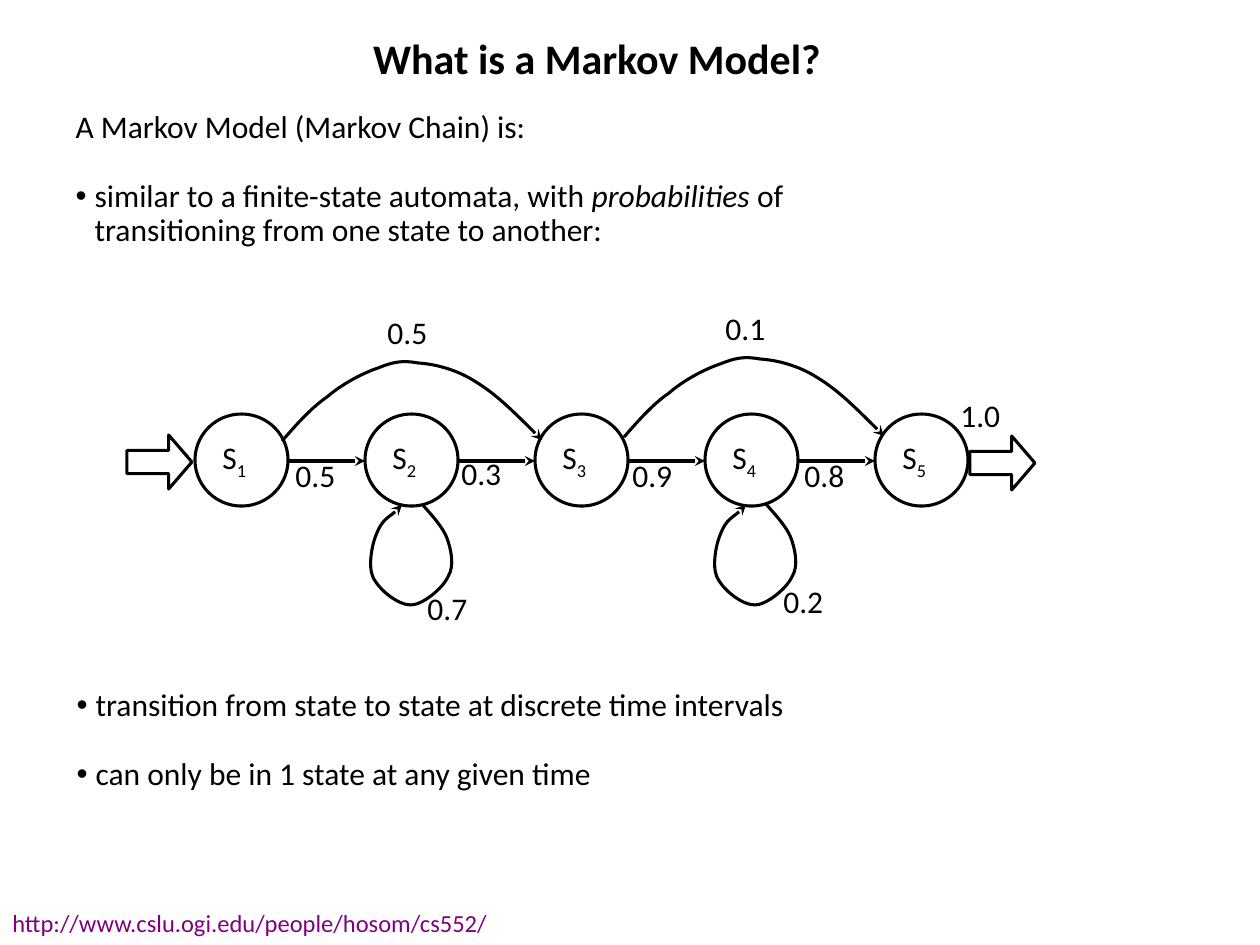
from lxml import etree
from pptx import Presentation
from pptx.dml.color import RGBColor
from pptx.enum.shapes import MSO_CONNECTOR, MSO_SHAPE
from pptx.enum.text import MSO_ANCHOR, MSO_AUTO_SIZE, PP_ALIGN
from pptx.oxml.ns import qn
from pptx.util import Pt

OVAL, BLOCK_ARROW = MSO_SHAPE.OVAL, MSO_SHAPE.RIGHT_ARROW
STRAIGHT = MSO_CONNECTOR.STRAIGHT
NO_FIT, TOP = MSO_AUTO_SIZE.NONE, MSO_ANCHOR.TOP
LEFT, CENTER = PP_ALIGN.LEFT, PP_ALIGN.CENTER
BLACK = RGBColor(0x00, 0x00, 0x00)
PURPLE = RGBColor(0x80, 0x00, 0x80)
SCALE = 914400 / 126

TITLE = "What is a Markov Model?"
TITLE_BOX = (50, 26, 1094, 63)
LINK = "http://www.cslu.ogi.edu/people/hosom/cs552/"
LINK_BOX = (0, 902, 703, 43)
ITALIC = {"italic": True}
SUBSCRIPT = "-25000"
LISTS = [
    ((63, 105, 969, 228), [
        (False, [("A Markov Model (Markov Chain) is:", {})]),
        (True, [("similar to a finite-state automata, with ", {}),
                ("probabilities", ITALIC),
                (" of\vtransitioning from one state to another:", {})]),
    ]),
    ((64, 683, 940, 137), [
        (True, [("transition from state to state at discrete time intervals", {})]),
        (True, [("can only be in 1 state at any given time", {})]),
    ]),
]

STATES = ["1", "2", "3", "4", "5"]
STATE_LEFT, STATE_TOP, STATE_WIDTH, STATE_HEIGHT = 195, 414, 93, 92
STATE_STEP = 170
BLOCK_ARROWS = [(127, 435), (970, 436)]
PROBABILITIES = [
    ("0.5", 375, 311), ("0.5", 283, 454), ("0.3", 449, 452),
    ("0.7", 415, 587), ("0.1", 713, 307), ("0.9", 620, 454),
    ("0.8", 792, 454), ("0.2", 771, 580), ("1.0", 948, 394),
]

SKIP_CURVE = [
    (14, -16), (29, -33), (45, -44), (60, -57), (81, -68), (96, -73),
    (111, -79), (120, -81), (136, -78), (152, -77), (174, -72), (194, -59),
    (214, -47), (237, -24), (260, -1),
]
LOOP_CURVE = [
    (4, 5), (20, 21), (25, 34), (29, 45), (33, 62), (26, 73),
    (21, 84), (1, 101), (-11, 101), (-24, 101), (-43, 86), (-49, 73),
    (-54, 62), (-50, 40), (-45, 29), (-40, 16), (-25, 8), (-20, 1),
]
CURVES = [
    ((282, 441), SKIP_CURVE), ((624, 437), SKIP_CURVE),
    ((422, 504), LOOP_CURVE), ((766, 504), LOOP_CURVE),
]


def px(*values):
    return [round(value * SCALE) for value in values]


def add_span(para, text, size=18, color=BLACK, **extra):
    span = para.add_run()
    span.text = text
    values = {"name": "Calibri", "size": Pt(size), **extra}
    for name, value in values.items():
        setattr(span.font, name, value)
    span.font.color.rgb = color
    return span


def add_label(page, place, text, spacing=0.9, **look):
    box = page.shapes.add_textbox(*px(*place))
    box.text_frame.word_wrap = True
    para = box.text_frame.paragraphs[0]
    para.line_spacing = spacing
    add_span(para, text, **look)
    return para


def place_holder(holder, place):
    holder.left, holder.top, holder.width, holder.height = px(*place)
    frame = holder.text_frame
    frame.auto_size = NO_FIT
    frame.word_wrap = True
    return frame


def fill_list(holder, place, items):
    frame = place_holder(holder, place)
    frame.vertical_anchor = TOP
    for index, (bulleted, spans) in enumerate(items):
        para = frame.add_paragraph() if index else frame.paragraphs[0]
        props = para._p.get_or_add_pPr()
        hang = px(19 if bulleted else 0)[0]
        props.set("marL", str(hang))
        props.set("indent", str(-hang))
        if bulleted:
            etree.SubElement(props, qn("a:buChar"), char="•")
        else:
            etree.SubElement(props, qn("a:buNone"))
        values = {"alignment": LEFT, "line_spacing": 0.9,
                  "space_before": Pt(19.8 if index else 0)}
        for name, value in values.items():
            setattr(para, name, value)
        for text, look in spans:
            for number, part in enumerate(text.split("\v")):
                if number:
                    para.add_line_break()
                add_span(para, part, **look)


def outline(shape, arrow=False):
    shape.line.color.rgb = BLACK
    shape.line.width = Pt(1.75)
    if arrow:
        line = shape.element.find(qn("p:spPr")).find(qn("a:ln"))
        etree.SubElement(line, qn("a:tailEnd"), type="stealth")


def add_outlined(page, kind, place):
    shape = page.shapes.add_shape(kind, *px(*place))
    shape.shadow.inherit = False
    shape.fill.background()
    outline(shape)
    return shape


def add_curve(page, start, offsets):
    x, y = start
    builder = page.shapes.build_freeform(x, y, scale=SCALE)
    builder.add_line_segments([(x + dx, y + dy) for dx, dy in offsets], close=False)
    shape = builder.convert_to_shape()
    segments = list(shape.element.iter(qn("a:lnTo")))
    outline_path = segments[0].getparent()
    for first in range(0, len(segments), 3):
        bend = etree.SubElement(outline_path, qn("a:cubicBezTo"))
        for segment in segments[first:first + 3]:
            bend.append(segment[0])
            outline_path.remove(segment)
    shape.shadow.inherit = False
    shape.fill.background()
    outline(shape, arrow=True)


def add_states(page):
    middle = STATE_TOP + STATE_HEIGHT // 2 + 1
    for index, number in enumerate(STATES):
        left = STATE_LEFT + STATE_STEP * index
        add_outlined(page, OVAL, (left, STATE_TOP, STATE_WIDTH, STATE_HEIGHT))
        para = add_label(page, (left + 15, STATE_TOP + 18, 63, 58), "S")
        add_span(para, number).font._element.set("baseline", SUBSCRIPT)
        if index < len(STATES) - 1:
            ends = px(left + STATE_WIDTH, middle, left + STATE_STEP, middle)
            link = page.shapes.add_connector(STRAIGHT, *ends)
            outline(link, arrow=True)
            etree.SubElement(link.element.find(qn("p:spPr")), qn("a:effectLst"))


def main():
    deck = Presentation()
    deck.slide_width, deck.slide_height = px(1260, 945)
    page = deck.slides.add_slide(deck.slide_layouts[3])
    title, *bodies = page.placeholders
    para = place_holder(title, TITLE_BOX).paragraphs[0]
    para.alignment = CENTER
    add_span(para, TITLE, size=24, bold=True)
    for holder, (place, items) in zip(bodies, LISTS):
        fill_list(holder, place, items)
    add_states(page)
    for start, offsets in CURVES:
        add_curve(page, start, offsets)
    for left, top in BLOCK_ARROWS:
        arrow = add_outlined(page, BLOCK_ARROW, (left, top, 65, 54))
        arrow.adjustments[0] = arrow.adjustments[1] = 0.43
    for text, left, top in PROBABILITIES:
        add_label(page, (left, top, 78, 58), text)
    add_label(page, LINK_BOX, LINK, spacing=1.0, size=14, color=PURPLE)
    deck.save("out.pptx")


if __name__ == "__main__":
    main()
